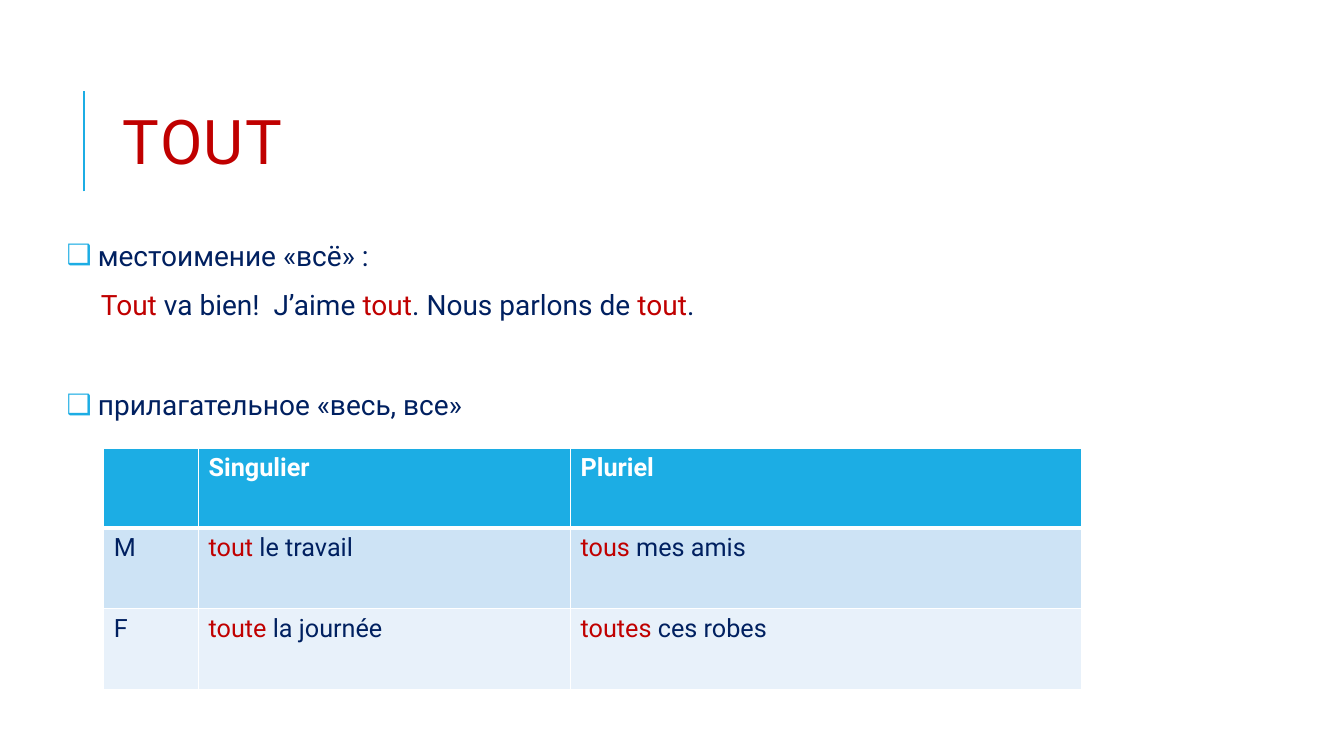
import pptx
import pptx.dml.color
import pptx.enum.shapes
import pptx.enum.text
import pptx.oxml
import pptx.oxml.ns
import pptx.util

COLOURS = {
    "accent": "1CADE4",
    "red": "C00000",
    "navy": "002060",
    "white": "FFFFFF",
    "band_dark": "CDE3F5",
    "band_light": "E8F1FA",
}
BULLET_LINES = [
    ("местоимение «всё» :", True, 12),
    ("*Tout* va bien!  J’aime *tout*. Nous parlons de *tout*.", False, 12),
    ("прилагательное «весь, все»", True, 47.5),
]
TABLE_ROWS = [
    ("", "Singulier", "Pluriel"),
    ("M", "*tout* le travail", "*tous* mes amis"),
    ("F", "*toute* la journée", "*toutes* ces robes"),
]


def colour(name):
    return pptx.dml.color.RGBColor.from_string(COLOURS[name])


def apply_format(target, values):
    for name, value in values.items():
        setattr(target, name, value)


def add_xml(parent, markup):
    namespace = pptx.oxml.ns.nsdecls("a")
    element = pptx.oxml.parse_xml(markup.replace(" ", f" {namespace} ", 1))
    parent.append(element)


class GrammarSlide:
    """Builds one grammar slide with lengths in percent of the slide size."""

    font_name = "Roboto"

    def __init__(self, deck):
        self.width, self.height = deck.slide_width, deck.slide_height
        self.page = deck.slides.add_slide(deck.slide_layouts[1])

    def across(self, share):
        return round(self.width * share / 100)

    def down(self, share):
        return round(self.height * share / 100)

    def place(self, box, left, top, width, height):
        apply_format(box, {
            "left": self.across(left), "top": self.down(top),
            "width": self.across(width), "height": self.down(height),
        })

    def add_spans(self, para, text, size, base="navy", bold=False):
        for index, part in enumerate(text.split("*")):
            if part:
                span = para.add_run()
                span.text = part
                apply_format(span.font, {
                    "name": self.font_name, "size": pptx.util.Pt(size), "bold": bold,
                })
                span.font.color.rgb = colour("red" if index % 2 else base)

    def rule(self, x, top, bottom):
        line = self.page.shapes.add_connector(
            pptx.enum.shapes.MSO_CONNECTOR.STRAIGHT,
            self.across(x), self.down(bottom), self.across(x), self.down(top))
        line.line.color.rgb = colour("accent")
        line.line.width = pptx.util.Pt(1.5)
        add_xml(line._element.spPr, "<a:effectLst />")

    def title(self, text, *area):
        box = self.page.shapes.title
        self.place(box, *area)
        apply_format(box.text_frame, {
            "vertical_anchor": pptx.enum.text.MSO_ANCHOR.MIDDLE,
            "auto_size": pptx.enum.text.MSO_AUTO_SIZE.NONE,
        })
        para = box.text_frame.paragraphs[0]
        apply_format(para, {"alignment": pptx.enum.text.PP_ALIGN.LEFT, "line_spacing": 0.8})
        self.add_spans(para, text, 44, "red")
        para.runs[0]._r.get_or_add_rPr().set("spc", "100")

    def bullets(self, lines, *area):
        box = self.page.placeholders[1]
        self.place(box, *area)
        frame = box.text_frame
        sides = ("left", "top", "right", "bottom")
        apply_format(frame, {f"margin_{side}": pptx.util.Inches(0.05) for side in sides})
        apply_format(frame, {
            "vertical_anchor": pptx.enum.text.MSO_ANCHOR.TOP,
            "auto_size": pptx.enum.text.MSO_AUTO_SIZE.NONE,
        })
        for index, (text, marked, space) in enumerate(lines):
            para = frame.add_paragraph() if index else frame.paragraphs[0]
            apply_format(para, {
                "line_spacing": 0.9,
                "space_before": pptx.util.Pt(space),
                "space_after": pptx.util.Pt(2),
            })
            settings = para._element.get_or_add_pPr()
            indent = pptx.util.Inches(0.31 if marked else 0.34)
            settings.set("marL", str(int(indent)))
            settings.set("indent", str(-int(indent) if marked else 0))
            if marked:
                add_xml(settings, f'<a:buClr ><a:srgbClr val="{COLOURS["accent"]}"/></a:buClr>')
                add_xml(settings, '<a:buChar char="❑"/>')
            else:
                add_xml(settings, "<a:buNone />")
            self.add_spans(para, text, 20)

    def borders(self, cell, row):
        widths = {"L": 1, "R": 1, "T": 3 if row == 1 else 1, "B": 3 if row == 0 else 1}
        for side, width in widths.items():
            add_xml(cell._tc.get_or_add_tcPr(),
                    f'<a:ln{side} w="{int(pptx.util.Pt(width))}"><a:solidFill>'
                    f'<a:srgbClr val="{COLOURS["white"]}"/></a:solidFill></a:ln{side}>')

    def table(self, rows, left, top, widths, heights):
        grid = self.page.shapes.add_table(
            len(rows), len(widths), self.across(left), self.down(top),
            self.across(sum(widths)), self.down(sum(heights))).table
        for column, width in zip(grid.columns, widths):
            column.width = self.across(width)
        for line, height in zip(grid.rows, heights):
            line.height = self.down(height)
        fills = ("accent", "band_dark", "band_light")
        for row, texts in enumerate(rows):
            for column, text in enumerate(texts):
                cell = grid.cell(row, column)
                self.borders(cell, row)
                cell.fill.solid()
                cell.fill.fore_color.rgb = colour(fills[row])
                self.add_spans(cell.text_frame.paragraphs[0], text, 18,
                               "navy" if row else "white", row == 0)


def main():
    deck = pptx.Presentation()
    deck.slide_width = pptx.util.Inches(13.33)
    deck.slide_height = pptx.util.Inches(7.5)
    slide = GrammarSlide(deck)
    slide.rule(6.25, 12, 25.33)
    slide.title("TOUT", 8.4, 8.53, 79.75, 21.87)
    slide.bullets(BULLET_LINES, 4.58, 31.33, 88.3, 58.67)
    slide.table(TABLE_ROWS, 7.73, 59.33, (7.05, 27.68, 38.03), (10.53, 10.67, 10.67))
    deck.save("out.pptx")


if __name__ == "__main__":
    main()
